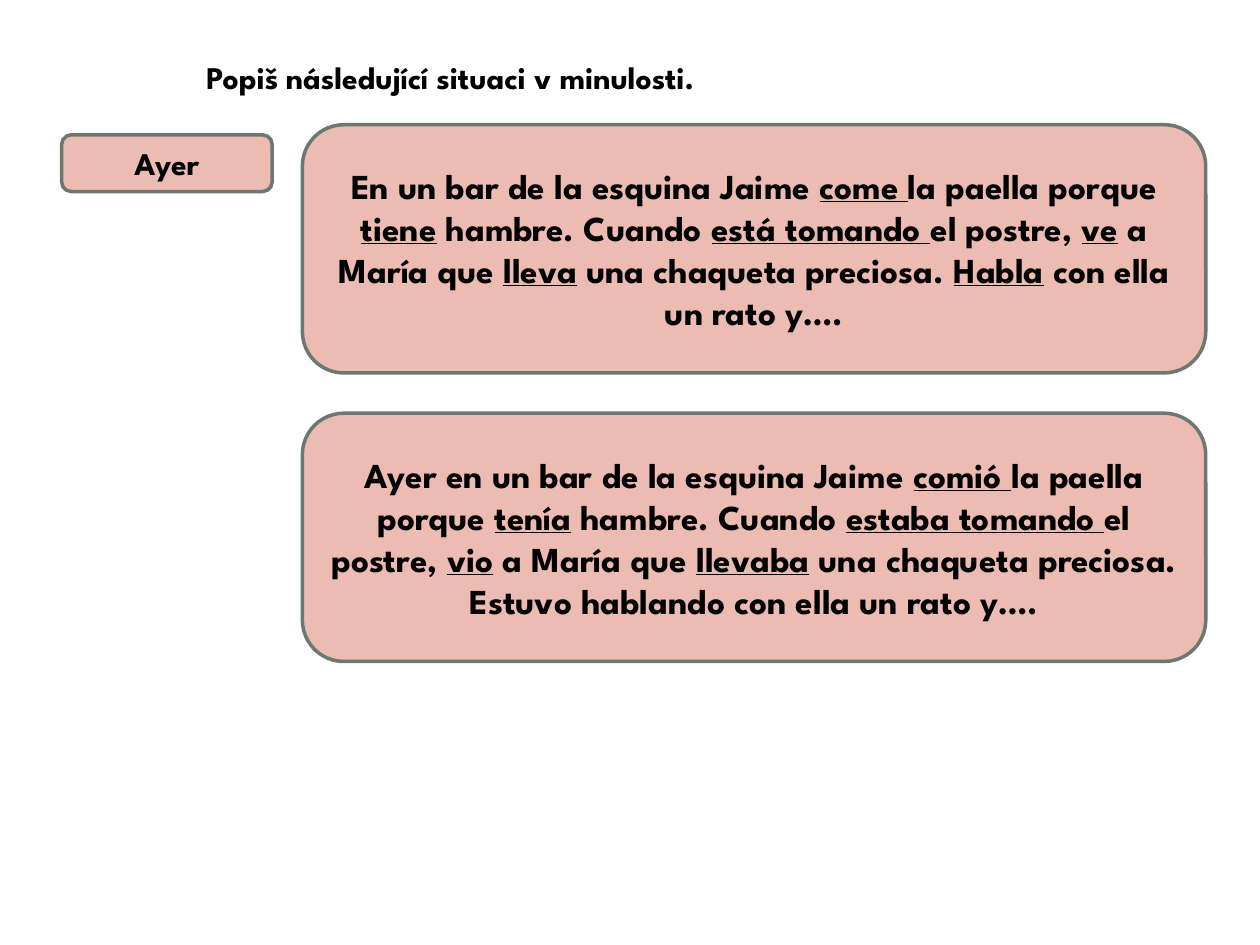
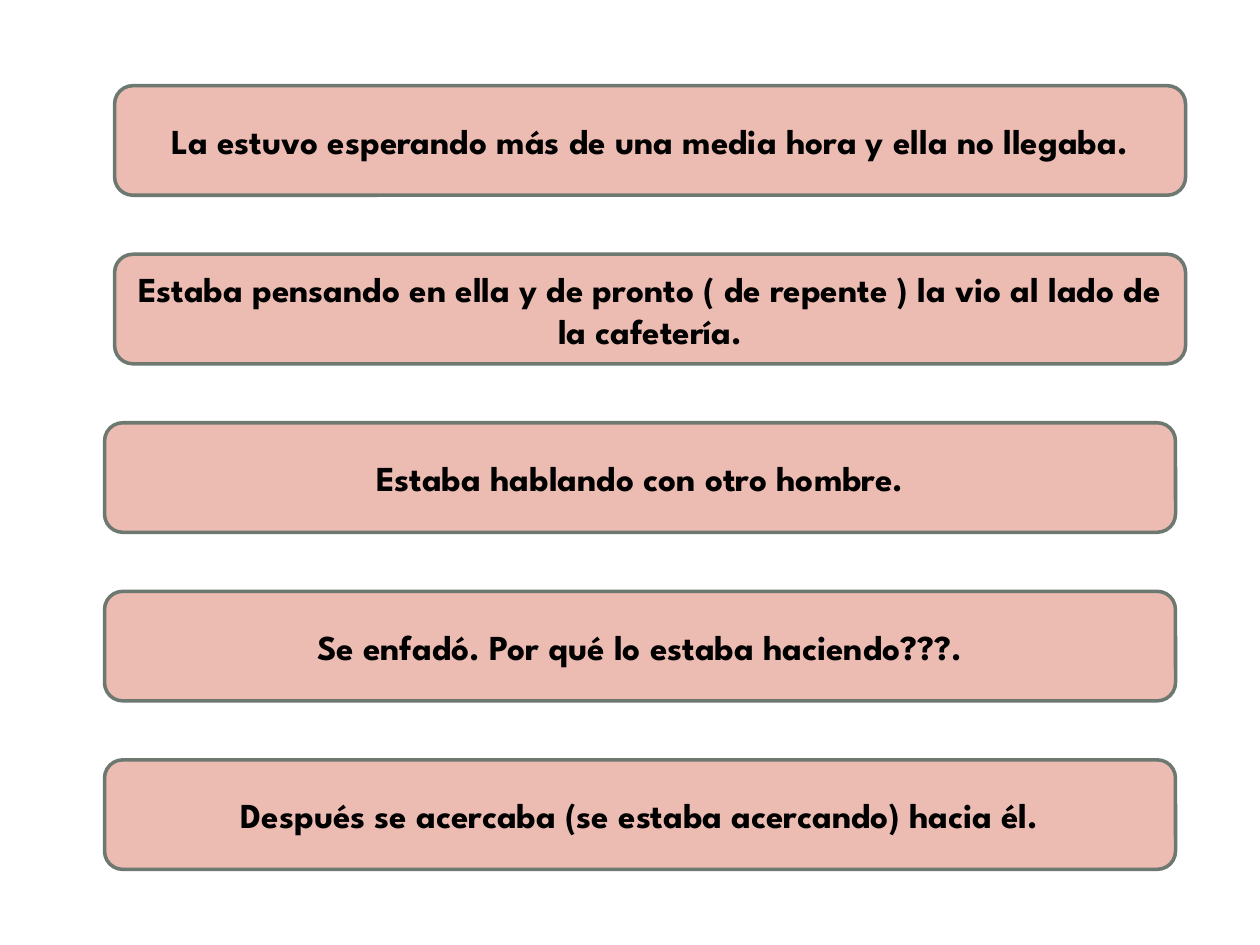
from collections import namedtuple

from pptx import Presentation
from pptx import util as u
from pptx.dml.color import RGBColor
from pptx.enum import shapes, text

PINK = RGBColor(0xEC, 0xBB, 0xB2)
GREY = RGBColor(0x6D, 0x78, 0x71)
BLACK = RGBColor(0x00, 0x00, 0x00)
FONT = "League Spartan"
LABEL_SIZE, SENTENCE_SIZE = 18, 20

WIDTH, HEIGHT = u.Inches(10), u.Inches(7.5)
COLUMNS, ROWS = 100, 75
BLANK_LAYOUT = 6

# Lengths in columns and rows of the slide grid
Box = namedtuple("Box", "left top width height")

HEADING = "Popiš následující situaci v minulosti."
# Underscores enclose the underlined verbs
STORIES = (
    "En un bar de la esquina Jaime _come _la paella porque _tiene_ hambre. "
    "Cuando _está tomando _el postre, _ve_ a María que _lleva_ una chaqueta "
    "preciosa. _Habla_ con ella un rato y….",
    "Ayer en un bar de la esquina Jaime _comió _la paella porque _tenía_ hambre. "
    "Cuando _estaba tomando _el postre, _vio_ a María que _llevaba_ una chaqueta "
    "preciosa. Estuvo hablando con ella un rato y….",
)
SENTENCES = (
    "La estuvo esperando más de una media hora y ella no llegaba.",
    "Estaba pensando en ella y de pronto ( de repente ) la vio al lado de la cafetería.",
    "Estaba hablando con otro hombre.",
    "Se enfadó. Por qué lo estaba haciendo???.",
    "Después se acercaba (se estaba acercando) hacia él.",
)


def to_emu(box):
    column, row = WIDTH / COLUMNS, HEIGHT / ROWS
    return (round(box.left * column), round(box.top * row),
            round(box.width * column), round(box.height * row))


def write(paragraph, marked_text, size):
    """Fill the paragraph, underlining what stands between underscores."""
    for index, part in enumerate(marked_text.split("_")):
        run = paragraph.add_run()
        run.text = part
        if index % 2:
            run.font.underline = True
    font = paragraph.font
    font.name, font.size, font.bold = FONT, u.Pt(size), True
    font.color.rgb = BLACK


def add_heading(slide, box):
    frame = slide.shapes.add_textbox(*to_emu(box)).text_frame
    frame.word_wrap = True
    frame.auto_size = text.MSO_AUTO_SIZE.SHAPE_TO_FIT_TEXT
    write(frame.paragraphs[0], HEADING, LABEL_SIZE)


def add_card(slide, box, marked_text, size=SENTENCE_SIZE):
    card = slide.shapes.add_shape(shapes.MSO_SHAPE.ROUNDED_RECTANGLE, *to_emu(box))
    card.shadow.inherit = False
    card.fill.solid()
    card.fill.fore_color.rgb = PINK
    card.line.color.rgb = GREY
    card.line.width = u.Pt(2)
    frame = card.text_frame
    frame.word_wrap = True
    frame.vertical_anchor = text.MSO_ANCHOR.MIDDLE
    paragraph = frame.paragraphs[0]
    paragraph.alignment = text.PP_ALIGN.CENTER
    write(paragraph, marked_text, size)


def add_card_stack(slide, box, texts, gap, indents):
    """Divide the box into equal cards, each shifted right by its indent."""
    height = (box.height - gap * (len(texts) - 1)) / len(texts)
    for index, (marked_text, indent) in enumerate(zip(texts, indents)):
        top = box.top + index * (height + gap)
        add_card(slide, Box(box.left + indent, top, box.width, height), marked_text)


def add_story_slide(presentation):
    slide = presentation.slides.add_slide(presentation.slide_layouts[BLANK_LAYOUT])
    add_heading(slide, Box(15.4, 4.1, 66.9, 4))
    add_card(slide, Box(4.9, 10.7, 16.7, 4.5), "Ayer", LABEL_SIZE)
    add_card_stack(slide, Box(24, 9.9, 71.7, 42.6), STORIES, gap=3.2, indents=(0, 0))


def add_sentence_slide(presentation):
    slide = presentation.slides.add_slide(presentation.slide_layouts[BLANK_LAYOUT])
    add_card_stack(slide, Box(8.3, 6.8, 85, 62.2), SENTENCES,
                   gap=4.68, indents=(0.8, 0.8, 0, 0, 0))


def main():
    presentation = Presentation()
    presentation.slide_width, presentation.slide_height = WIDTH, HEIGHT
    add_story_slide(presentation)
    add_sentence_slide(presentation)
    presentation.save("out.pptx")


if __name__ == "__main__":
    main()
